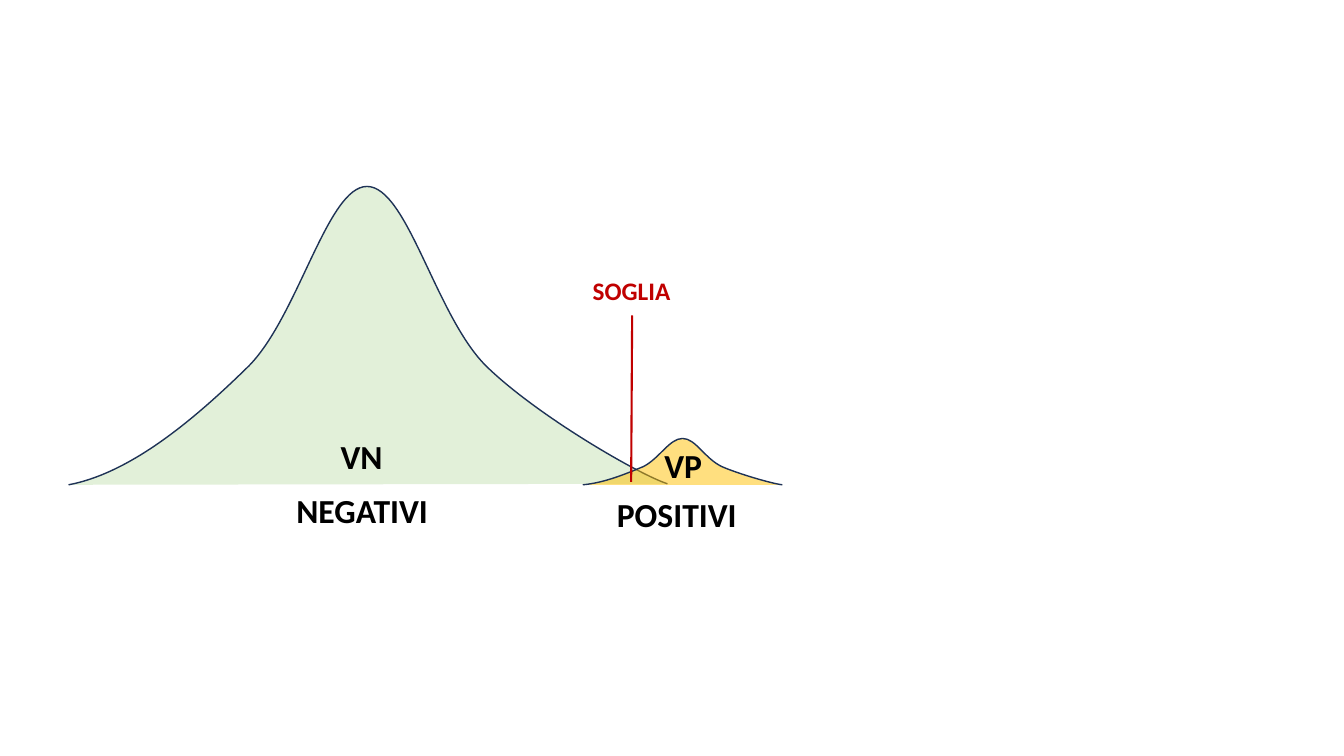
from lxml import etree
from pptx import Presentation
from pptx.dml.color import RGBColor
from pptx.enum.shapes import MSO_CONNECTOR
from pptx.enum.text import MSO_AUTO_SIZE, PP_ALIGN
from pptx.oxml.ns import qn
from pptx.util import Inches, Pt

STRAIGHT = MSO_CONNECTOR.STRAIGHT
LEFT = PP_ALIGN.LEFT
GROW = MSO_AUTO_SIZE.SHAPE_TO_FIT_TEXT

BLACK = RGBColor(0x00, 0x00, 0x00)
RED = RGBColor(0xC0, 0x00, 0x00)
NAVY = RGBColor(0x1E, 0x32, 0x56)
GREEN = RGBColor(0xE2, 0xF0, 0xD9)
AMBER = RGBColor(0xFF, 0xC0, 0x00)

presentation = Presentation()
presentation.slide_width = Inches(13.33)
presentation.slide_height = Inches(7.5)
slide = presentation.slides.add_slide(presentation.slide_layouts[6])

COLUMN = presentation.slide_width / 133.3
ROW = presentation.slide_height / 75


def add_label(text, left, top, width, height=5, size=24, color=BLACK):
    box = slide.shapes.add_textbox(
        round(left * COLUMN), round(top * ROW), round(width * COLUMN), round(height * ROW)
    )
    box.text_frame.word_wrap = False
    box.text_frame.auto_size = GROW
    paragraph = box.text_frame.paragraphs[0]
    paragraph.alignment = LEFT
    run = paragraph.add_run()
    run.text = text
    run.font.name = "Calibri"
    run.font.size = Pt(size)
    run.font.bold = True
    run.font.color.rgb = color


negatives = [
    (6.8, 48.1), (13.2, 46.9), (19.7, 41.2), (24.7, 36.3),
    (29.6, 31.3), (32.5, 18.5), (36.4, 18.5),
    (40.4, 18.5), (43.2, 31.3), (48.2, 36.3),
    (53.2, 41.2), (63.4, 47.1), (66.2, 48),
]
positives = [
    (57.8, 48.1), (60, 47.9), (62.1, 47), (63.8, 46.3),
    (65.4, 45.5), (66.4, 43.5), (67.7, 43.5),
    (69, 43.5), (69.9, 45.5), (71.6, 46.3),
    (73.2, 47), (76.6, 48), (77.6, 48.1),
]

for knots, color, opacity in ((negatives, GREEN, 100), (positives, AMBER, 50)):
    start, *others = [(round(x * COLUMN), round(y * ROW)) for x, y in knots]
    builder = slide.shapes.build_freeform(*start)
    builder.add_line_segments(others, close=False)
    curve = builder.convert_to_shape()
    segments = list(curve.element.spPr.iter(qn("a:lnTo")))
    outline = segments[0].getparent()
    for index in range(0, len(segments), 3):
        bend = etree.SubElement(outline, qn("a:cubicBezTo"))
        for segment in segments[index:index + 3]:
            bend.append(segment[0])
            outline.remove(segment)
    curve.shadow.inherit = False
    curve.fill.solid()
    curve.fill.fore_color.rgb = color
    curve.line.color.rgb = NAVY
    curve.line.width = Pt(1)
    if opacity < 100:
        fill_color = curve.element.spPr.find(qn("a:solidFill")).find(qn("a:srgbClr"))
        etree.SubElement(fill_color, qn("a:alpha")).set("val", str(opacity * 1000))

add_label("NEGATIVI", 28.4, 48.1, 15.2)
add_label("POSITIVI", 60.2, 48.5, 14)
add_label("VN", 32.8, 42.8, 6.2)
add_label("VP", 64.9, 43.6, 5.8)

threshold = slide.shapes.add_connector(
    STRAIGHT,
    round(62.6 * COLUMN), round(47.8 * ROW),
    round(62.7 * COLUMN), round(31.3 * ROW),
)
threshold.line.color.rgb = RED
threshold.line.width = Pt(1.5)
etree.SubElement(threshold.element.spPr, qn("a:effectLst"))

add_label("SOGLIA", 57.8, 26.8, 9.8, height=4, size=18, color=RED)

presentation.save("out.pptx")
